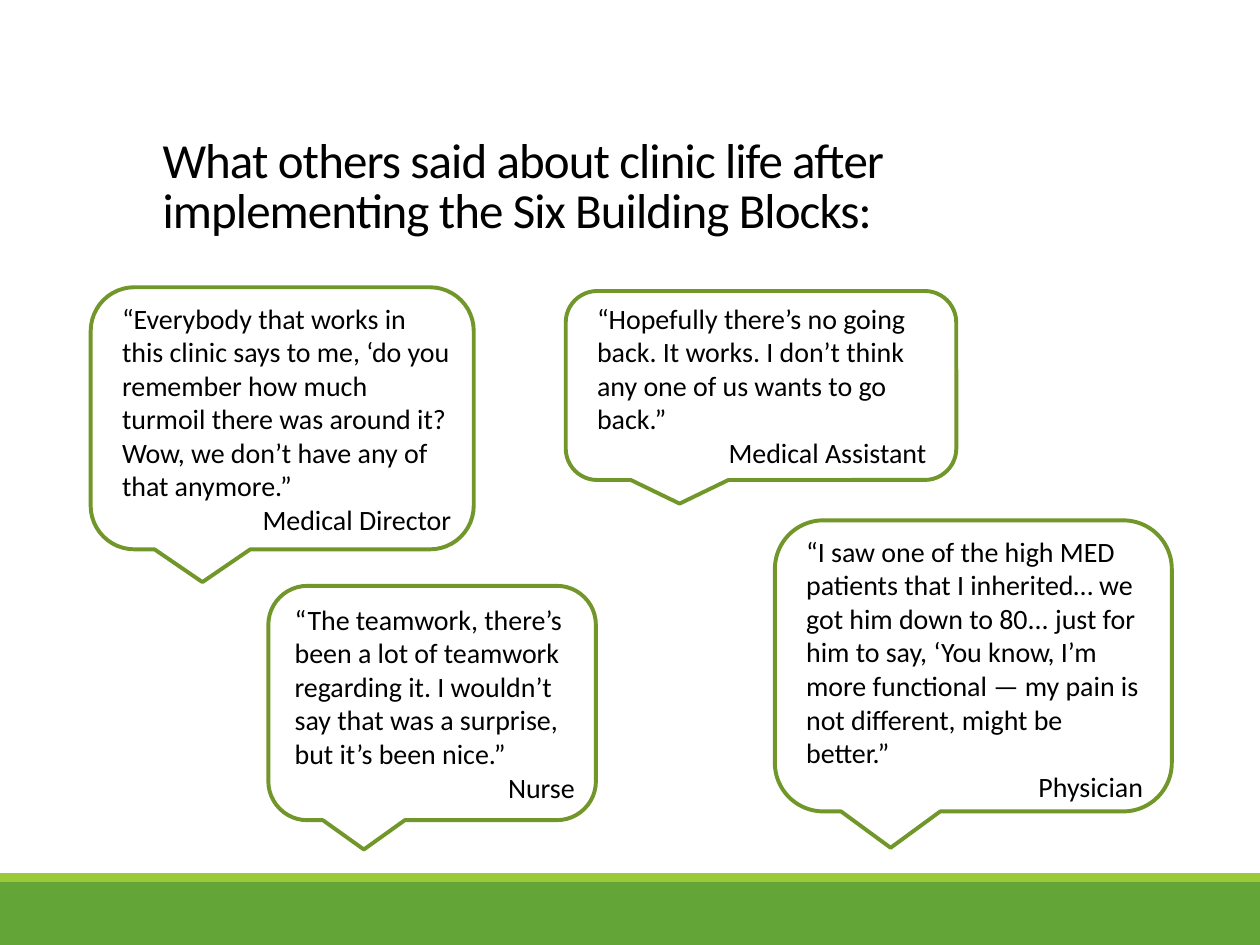
"""Build a slide of four clinic staff quotes in speech callouts."""
from typing import NamedTuple

from pptx import Presentation
from pptx.dml.color import RGBColor
from pptx.enum.shapes import MSO_SHAPE as Shape
from pptx.enum.text import MSO_ANCHOR as Anchor, MSO_AUTO_SIZE as AutoSize, PP_ALIGN as Align
from pptx.util import Inches, Pt

BLACK = RGBColor(0x00, 0x00, 0x00)
OLIVE = RGBColor(0x71, 0x96, 0x29)
GREEN = RGBColor(0x63, 0xA5, 0x37)
LIME = RGBColor(0x99, 0xCB, 0x38)
FONT = "Calibri"
GRID_COLUMNS, GRID_ROWS = 100, 75


class Area(NamedTuple):
    """A rectangle in grid columns and rows."""

    column: float
    row: float
    columns: float
    rows: float


class Quote(NamedTuple):
    """A speech callout, its text area, the words and the speaker."""

    callout: Area
    text_area: Area
    words: str
    speaker: str


TITLE = "What others said about clinic life after implementing the Six Building Blocks:"
TITLE_AREA = Area(11.9, 11.6, 81, 7.8)
BANDS = [(Area(0, 70, 100, 5), GREEN), (Area(0, 69.3, 100, 0.7), LIME)]
QUOTES = [
    Quote(
        Area(7.2, 22.8, 30.4, 20.8), Area(8.7, 23.4, 28.1, 19.9),
        "“Everybody that works in this clinic says to me, ‘do you remember how much "
        "turmoil there was around it? Wow, we don’t have any of that anymore.”",
        "Medical Director",
    ),
    Quote(
        Area(44.9, 23.1, 31, 15), Area(46.4, 23.4, 28.1, 14.5),
        "“Hopefully there’s no going back. It works. I don’t think any one of us "
        "wants to go back.”",
        "Medical Assistant",
    ),
    Quote(
        Area(21.3, 46.5, 26, 18.6), Area(22.4, 47.3, 24.2, 17.2),
        "“The teamwork, there’s been a lot of teamwork regarding it. I wouldn’t say "
        "that was a surprise, but it’s been nice.”",
        "Nurse",
    ),
    Quote(
        Area(61.5, 41.3, 31.5, 23.1), Area(63, 41.9, 28.7, 22.6),
        "“I saw one of the high MED patients that I inherited… we got him down to "
        "80... just for him to say, ‘You know, I’m more functional — my pain is not "
        "different, might be better.”",
        "Physician",
    ),
]


def place(presentation, area: Area) -> tuple[int, int, int, int]:
    """Turn a grid area into left, top, width and height."""
    column_width = presentation.slide_width / GRID_COLUMNS
    row_height = presentation.slide_height / GRID_ROWS
    return (
        round(area.column * column_width), round(area.row * row_height),
        round(area.columns * column_width), round(area.rows * row_height),
    )


def format_runs(paragraph, size: float) -> None:
    """Give every run of a paragraph the slide's font, a size and black."""
    for run in paragraph.runs:
        run.font.name = FONT
        run.font.size = Pt(size)
        run.font.color.rgb = BLACK


def draw_band(presentation, slide, area: Area, color: RGBColor) -> None:
    """Draw one plain footer band."""
    band = slide.shapes.add_shape(Shape.RECTANGLE, *place(presentation, area))
    band.shadow.inherit = False
    band.fill.solid()
    band.fill.fore_color.rgb = color
    band.line.fill.background()


def draw_title(presentation, slide) -> None:
    """Move and format the title placeholder."""
    title = slide.shapes.title
    title.left, title.top, title.width, title.height = place(presentation, TITLE_AREA)
    frame = title.text_frame
    frame.text = TITLE
    frame.auto_size = AutoSize.NONE
    frame.vertical_anchor = Anchor.BOTTOM
    paragraph = frame.paragraphs[0]
    paragraph.alignment = Align.LEFT
    paragraph.line_spacing = 0.85
    format_runs(paragraph, 28)
    for run in paragraph.runs:
        run.font._element.set("spc", "-50")


def draw_quote(presentation, slide, quote: Quote) -> None:
    """Draw a callout and the quote with its speaker on the right."""
    callout = slide.shapes.add_shape(
        Shape.ROUNDED_RECTANGULAR_CALLOUT, *place(presentation, quote.callout)
    )
    callout.shadow.inherit = False
    callout.fill.background()
    callout.line.color.rgb = OLIVE
    callout.line.width = Pt(2.25)

    text_box = slide.shapes.add_textbox(*place(presentation, quote.text_area))
    frame = text_box.text_frame
    frame.word_wrap = True
    frame.auto_size = AutoSize.SHAPE_TO_FIT_TEXT
    frame.text = quote.words
    speaker = frame.add_paragraph()
    speaker.text = quote.speaker
    speaker.alignment = Align.RIGHT
    for paragraph in frame.paragraphs:
        format_runs(paragraph, 16)


def main() -> None:
    """Build and save the presentation."""
    presentation = Presentation()
    presentation.slide_width, presentation.slide_height = Inches(10), Inches(7.5)
    slide = presentation.slides.add_slide(presentation.slide_layouts.get_by_name("Title Only"))
    for area, color in BANDS:
        draw_band(presentation, slide, area, color)
    draw_title(presentation, slide)
    for quote in QUOTES:
        draw_quote(presentation, slide, quote)
    presentation.save("out.pptx")


if __name__ == "__main__":
    main()
